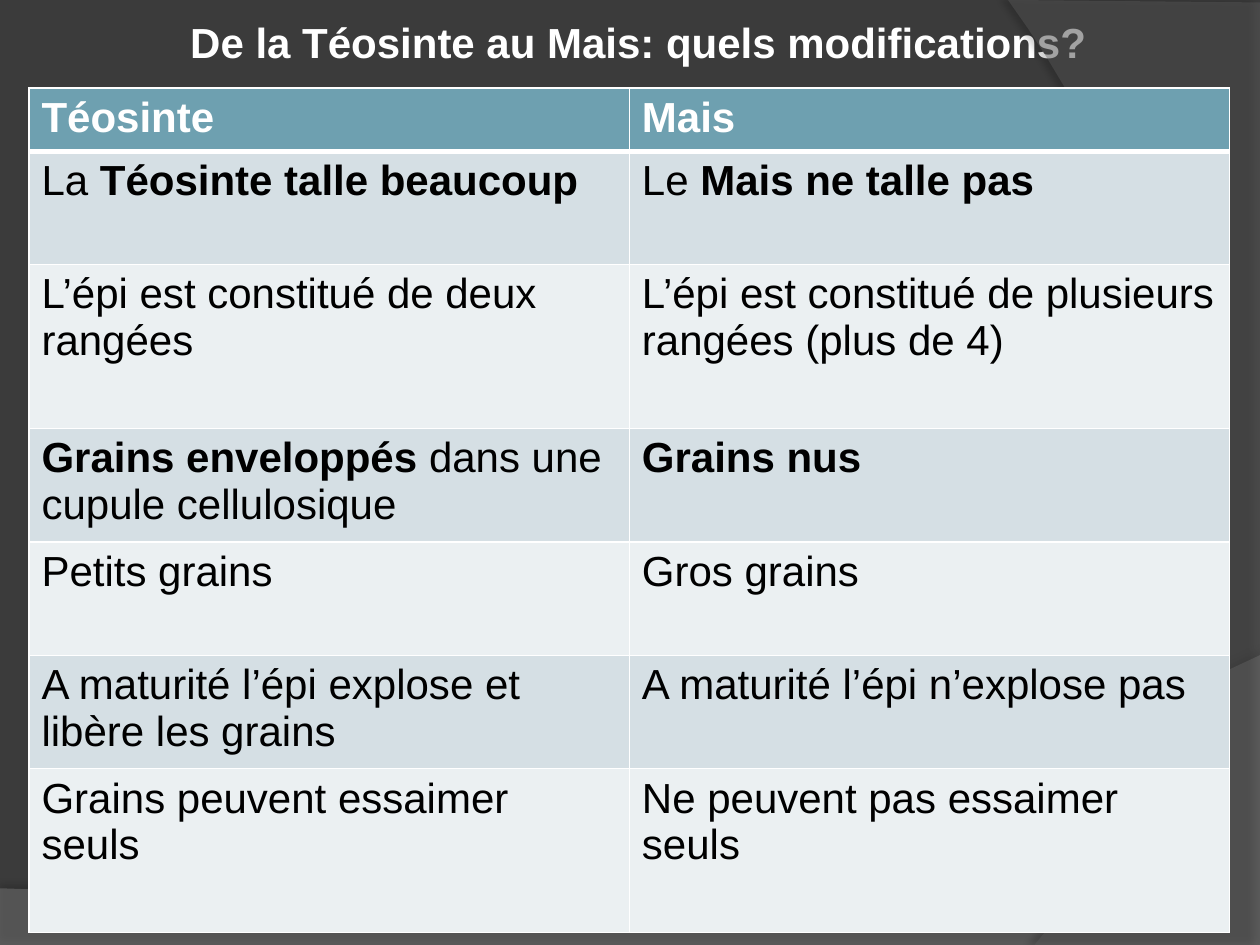
from lxml import etree
from pptx import Presentation
from pptx.dml.color import RGBColor
from pptx.enum.text import MSO_ANCHOR, MSO_AUTO_SIZE, PP_ALIGN
from pptx.oxml.ns import qn
from pptx.util import Inches, Pt

LEFT, TOP = PP_ALIGN.LEFT, MSO_ANCHOR.TOP
FIT_SHAPE = MSO_AUTO_SIZE.SHAPE_TO_FIT_TEXT

BACKGROUND = RGBColor(0x3B, 0x3B, 0x3B)
WAVE = RGBColor(0x7F, 0x7F, 0x7F)
ARC = RGBColor(0x5E, 0x5E, 0x5E)
WHITE = RGBColor(0xFF, 0xFF, 0xFF)
BLACK = RGBColor(0, 0, 0)
HEADER = RGBColor(0x6E, 0xA0, 0xB0)
BANDS = (RGBColor(0xEB, 0xF0, 0xF2), RGBColor(0xD5, 0xDF, 0xE4))

W, H = 10, 7.5
LINE = 0.4          # table height per text line
ROW_BASE = 0.1      # cell margins of a row
CURVE_STEPS = 40
FONT = {"name": "Arial", "size": Pt(24)}

TITLE = "De la Téosinte au Mais: quels modifications?"
# Text lines reserved for the row, then its two cells; *...* marks bold.
ROWS = [
    (1, "*Téosinte*", "*Mais*"),
    (2, "La *Téosinte talle beaucoup*", "Le *Mais ne talle pas*"),
    (3, "L’épi est constitué de deux rangées",
     "L’épi est constitué de plusieurs rangées (plus de 4)"),
    (2, "*Grains enveloppés* dans une cupule cellulosique", "*Grains nus*"),
    (2, "Petits grains", "Gros grains"),
    (2, "A maturité l’épi explose et libère les grains",
     "A maturité l’épi n’explose pas"),
    (3, "Grains peuvent essaimer seuls", "Ne peuvent pas essaimer seuls"),
]


def set_format(obj, values):
    for name, value in values.items():
        setattr(obj, name, value)


def add_runs(p, text, color):
    """Write text into p, with the parts between asterisks in bold."""
    for i, part in enumerate(text.split("*")):
        if part:
            r = p.add_run()
            r.text = part
            set_format(r.font, {**FONT, "bold": i % 2 == 1})
            r.font.color.rgb = color


def add_color(parent, color, opacity=100):
    clr = etree.SubElement(parent, qn("a:srgbClr"), val=str(color))
    if opacity < 100:
        etree.SubElement(clr, qn("a:alpha"), val=str(opacity * 1000))


def bezier(p0, p1, p2, p3):
    for i in range(1, CURVE_STEPS + 1):
        t = i / CURVE_STEPS
        u = 1 - t
        yield tuple(u**3 * a + 3 * u * u * t * b + 3 * u * t * t * c + t**3 * d
                    for a, b, c, d in zip(p0, p1, p2, p3))


def add_swoosh(s, points, color, opacity, shadow):
    """Draw a translucent outline; shadow is opacity, blur, distance, angle."""
    emu = [(Inches(x), Inches(y)) for x, y in points]
    fb = s.shapes.build_freeform(*emu[0])
    fb.add_line_segments(emu[1:], close=True)
    sp = fb.convert_to_shape()
    sp.fill.solid()
    sp.fill.fore_color.rgb = color
    clr = sp.fill._xPr.find(".//" + qn("a:srgbClr"))
    etree.SubElement(clr, qn("a:alpha"), val=str(opacity * 1000))
    sp.line.fill.background()
    sp.shadow.inherit = False
    alpha, blur, dist, angle = shadow
    effects = sp._element.spPr.find(qn("a:effectLst"))
    outer = etree.SubElement(effects, qn("a:outerShdw"), blurRad=str(Pt(blur)),
                             dist=str(Pt(dist)), dir=str(angle * 60000),
                             algn="ctr", rotWithShape="0")
    add_color(outer, BLACK, alpha)


def add_background(s):
    s.background.fill.solid()
    s.background.fill.fore_color.rgb = BACKGROUND
    wave = [(0, 7.05), (0, H), (W, H), (W, 5.2),
            *bezier((W, 5.2), (5.59, 7.29), (3.91, 7.19), (0, 7.05))]
    arc = [(W, 0.02), (W, H), (8.21, H),
           *bezier((8.21, H), (9.35, 6.19), (10.18, 3), (8, 0))]
    add_swoosh(s, wave, WAVE, 45, (35, 4, 3.5, 270))
    add_swoosh(s, arc, ARC, 40, (45, 4, 4, 180))


def add_title(s):
    sp = s.shapes.title
    set_format(sp, {"left": Inches(1.41), "top": Inches(0.08),
                    "width": Inches(7.97), "height": Inches(0.5)})
    tf = sp.text_frame
    set_format(tf, {"word_wrap": True, "vertical_anchor": TOP,
                    "auto_size": FIT_SHAPE})
    p = tf.paragraphs[0]
    p.alignment = LEFT
    add_runs(p, f"*{TITLE}*", WHITE)


def add_borders(cell, **widths):
    tcPr = cell._tc.get_or_add_tcPr()
    for i, side in enumerate("LRTB"):
        ln = etree.Element(qn("a:ln" + side), w=str(Pt(widths.get(side, 1))))
        add_color(etree.SubElement(ln, qn("a:solidFill")), WHITE)
        tcPr.insert(i, ln)


def add_comparison(s):
    heights = [ROW_BASE + LINE * lines for lines, *_ in ROWS]
    table = s.shapes.add_table(len(ROWS), 2, Inches(0.23), Inches(0.7),
                               Inches(9.53), Inches(sum(heights))).table
    table.horz_banding = False
    for i, (_, *texts) in enumerate(ROWS):
        table.rows[i].height = Inches(heights[i])
        for j, text in enumerate(texts):
            cell = table.cell(i, j)
            cell.fill.solid()
            cell.fill.fore_color.rgb = BANDS[i % 2] if i else HEADER
            add_borders(cell, T=3 if i == 1 else 1, B=1 if i else 3)
            add_runs(cell.text_frame.paragraphs[0], text, BLACK if i else WHITE)


def main():
    prs = Presentation()
    prs.slide_width, prs.slide_height = Inches(W), Inches(H)
    s = prs.slides.add_slide(prs.slide_layouts[5])
    add_background(s)
    add_title(s)
    add_comparison(s)
    prs.save("out.pptx")


if __name__ == "__main__":
    main()
